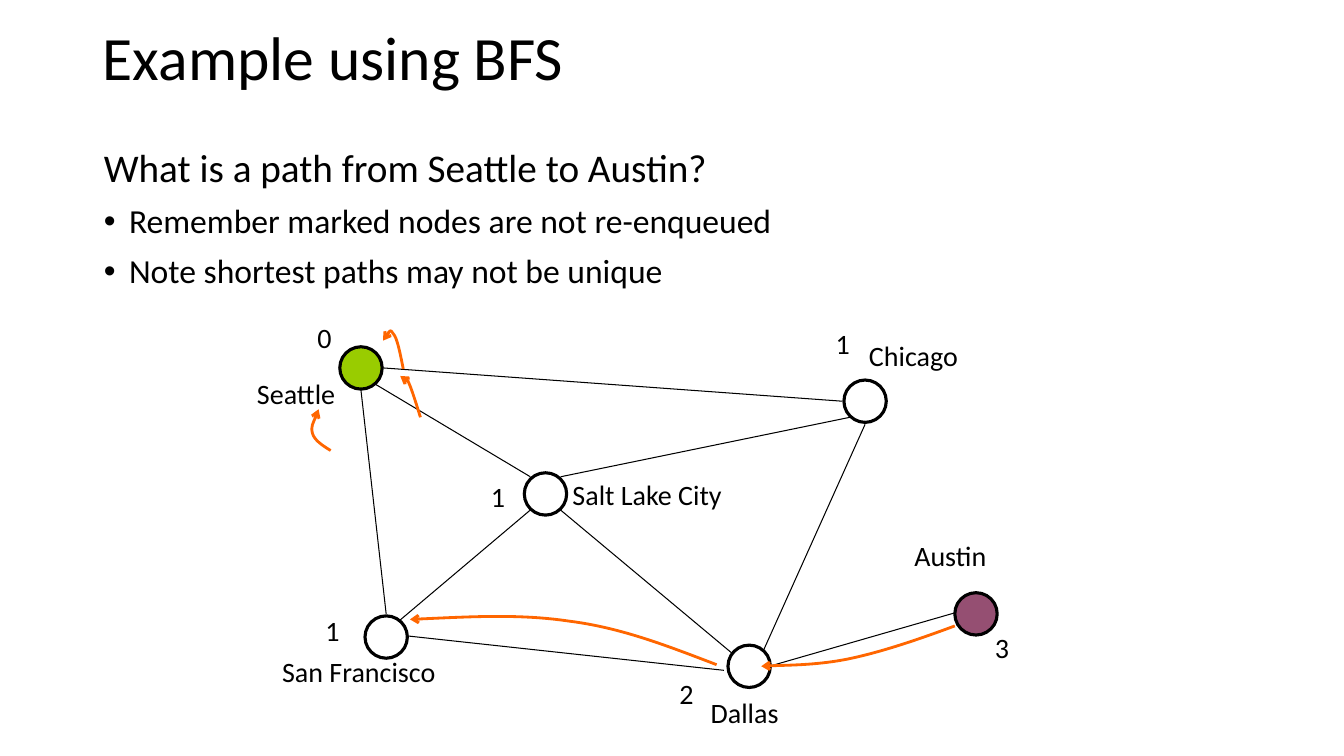
from lxml.etree import SubElement as Sub
from pptx import Presentation
from pptx.dml.color import RGBColor as RGB
from pptx.enum.shapes import MSO_CONNECTOR as Link, MSO_SHAPE as Kind
from pptx.enum.text import MSO_ANCHOR as Anchor, MSO_AUTO_SIZE as Fit, PP_ALIGN as Align
from pptx.oxml.ns import qn
from pptx.util import Inches, Pt

BLACK = RGB(0x00, 0x00, 0x00)
WHITE = RGB(0xFF, 0xFF, 0xFF)
GREEN = RGB(0x99, 0xCC, 0x00)
PLUM = RGB(0x95, 0x4F, 0x72)
ORANGE = RGB(0xFF, 0x66, 0x00)

TITLE = "Example using BFS"
LEAD = "What is a path from Seattle to Austin?"
NOTES = ["Remember marked nodes are not re-enqueued",
         "Note shortest paths may not be unique"]

SIZE = 0.42
HEIGHT = 0.44

# name: node corner, fill, label box (left, top, width), depth, depth box (left, top)
CITIES = {
    "San Francisco": ((3.62, 6.11), WHITE, (2.7, 6.44, 1.74), "1", (3.13, 6.04)),
    "Seattle": ((3.37, 3.44), GREEN, (2.45, 3.69, 1.01), "0", (3.05, 3.13)),
    "Salt Lake City": ((5.2, 4.69), WHITE, (5.58, 4.69, 1.7), "1", (4.77, 4.71)),
    "Chicago": ((8.37, 3.77), WHITE, (8.52, 3.31, 1.09), "1", (8.19, 3.19)),
    "Austin": ((9.47, 5.88), PLUM, (8.97, 5.29, 0.93), "3", (9.77, 6.21)),
    "Dallas": ((7.22, 6.4), WHITE, (6.95, 6.85, 0.88), "2", (6.64, 6.66)),
}
ROADS = [
    (3.83, 6.09, 3.58, 3.87),
    (8.58, 4.21, 7.56, 6.48),
    (8.35, 3.98, 3.8, 3.65),
    (3.72, 3.81, 5.26, 4.73),
    (3.97, 6.15, 5.26, 5.06),
    (5.56, 5.06, 7.26, 6.48),
    (5.56, 4.73, 8.43, 4.14),
    (7.18, 6.65, 4.05, 6.31),
    (7.63, 6.61, 9.47, 6.08),
]
# turn in degrees, then the start and the control points of two cubic curves
TRAILS = [
    (0, [(3.28, 4.47), (3.2, 4.42), (3.12, 4.37), (3.1, 4.3),
         (3.08, 4.23), (3.15, 4.1), (3.16, 4.06)]),
    (0, [(4.17, 4.14), (4.13, 4.01), (4.09, 3.88), (4.06, 3.81),
         (4.03, 3.74), (3.98, 3.74), (3.97, 3.73)]),
    (0, [(4, 3.66), (3.97, 3.51), (3.94, 3.35), (3.9, 3.31),
         (3.87, 3.26), (3.83, 3.32), (3.8, 3.38)]),
    (2.8, [(7.12, 6.52), (6.63, 6.36), (6.16, 6.2), (5.64, 6.16),
           (5.14, 6.11), (4.6, 6.17), (4.06, 6.22)]),
    (0, [(9.47, 6.21), (9.12, 6.34), (8.77, 6.46), (8.45, 6.53),
         (8.13, 6.6), (7.7, 6.6), (7.55, 6.61)]),
]


def write(par, text, size=20, space=0, lines=1.0, bullet=None):
    """Put formatted text into a paragraph."""
    props = par._p.get_or_add_pPr()
    inset = Inches(0.25) if bullet else 0
    props.set("marL", str(inset))
    props.set("indent", str(-inset))
    if bullet:
        Sub(props, qn("a:buFont"), typeface="Arial")
        Sub(props, qn("a:buChar"), char=bullet)
    else:
        Sub(props, qn("a:buNone"))
    par.alignment = Align.LEFT
    par.space_before = Pt(space)
    par.line_spacing = lines
    run = par.add_run()
    run.text = text
    run.font.name = "Calibri"
    run.font.size = Pt(size)
    run.font.color.rgb = BLACK


def place(shape, *box):
    """Move a placeholder to a box and fix its text size."""
    shape.left, shape.top, shape.width, shape.height = map(Inches, box)
    shape.text_frame.auto_size = Fit.NONE
    return shape.text_frame


def label(slide, text, left, top, width):
    """Add a one-line text box."""
    box = slide.shapes.add_textbox(*map(Inches, (left, top, width, HEIGHT)))
    box.text_frame.word_wrap = False
    box.text_frame.auto_size = Fit.SHAPE_TO_FIT_TEXT
    write(box.text_frame.paragraphs[0], text)


def road(slide, ends):
    """Join two nodes with a thin line."""
    line = slide.shapes.add_connector(Link.STRAIGHT, *map(Inches, ends))
    line.line.color.rgb = BLACK
    line.line.width = Pt(0.75)
    Sub(line._element.spPr, qn("a:effectLst"))


def node(slide, corner, fill):
    """Draw a city as a circle."""
    dot = slide.shapes.add_shape(Kind.OVAL, *map(Inches, (*corner, SIZE, SIZE)))
    dot.shadow.inherit = False
    dot.fill.solid()
    dot.fill.fore_color.rgb = fill
    dot.line.color.rgb = BLACK
    dot.line.width = Pt(2.25)


def bend(shape):
    """Turn each three straight segments into one cubic curve."""
    legs = list(shape._element.iter(qn("a:lnTo")))
    route = legs[0].getparent()
    for i in range(0, len(legs), 3):
        cubic = Sub(route, qn("a:cubicBezTo"))
        for leg in legs[i:i + 3]:
            cubic.append(leg[0])
            route.remove(leg)


def trail(slide, turn, points):
    """Draw a curved arrow back to the parent node."""
    first, *rest = [(Inches(x), Inches(y)) for x, y in points]
    pen = slide.shapes.build_freeform(*first)
    pen.add_line_segments(rest, close=False)
    shape = pen.convert_to_shape()
    bend(shape)
    shape.rotation = turn
    shape.shadow.inherit = False
    shape.fill.background()
    shape.line.color.rgb = ORANGE
    shape.line.width = Pt(2)
    Sub(shape.line._get_or_add_ln(), qn("a:tailEnd"), type="arrow")


def main():
    """Build the slide and save it."""
    deck = Presentation()
    deck.slide_width, deck.slide_height = Inches(13.33), Inches(7.5)
    slide = deck.slides.add_slide(deck.slide_layouts[1])

    head = place(slide.shapes.title, 0.92, 0.21, 11.5, 0.79)
    head.vertical_anchor = Anchor.MIDDLE
    write(head.paragraphs[0], TITLE, size=44, lines=0.9)
    body = place(slide.placeholders[1], 0.93, 1.42, 9.25, 1.65)
    write(body.paragraphs[0], LEAD, size=28, lines=0.9)
    for note in NOTES:
        write(body.add_paragraph(), note, size=24, space=10, lines=0.9, bullet="•")

    for ends in ROADS:
        road(slide, ends)
    for name, (corner, fill, spot, depth, mark) in CITIES.items():
        node(slide, corner, fill)
        label(slide, name, *spot)
        label(slide, depth, *mark, 0.36)
    for turn, points in TRAILS:
        trail(slide, turn, points)
    deck.save("out.pptx")


if __name__ == "__main__":
    main()
